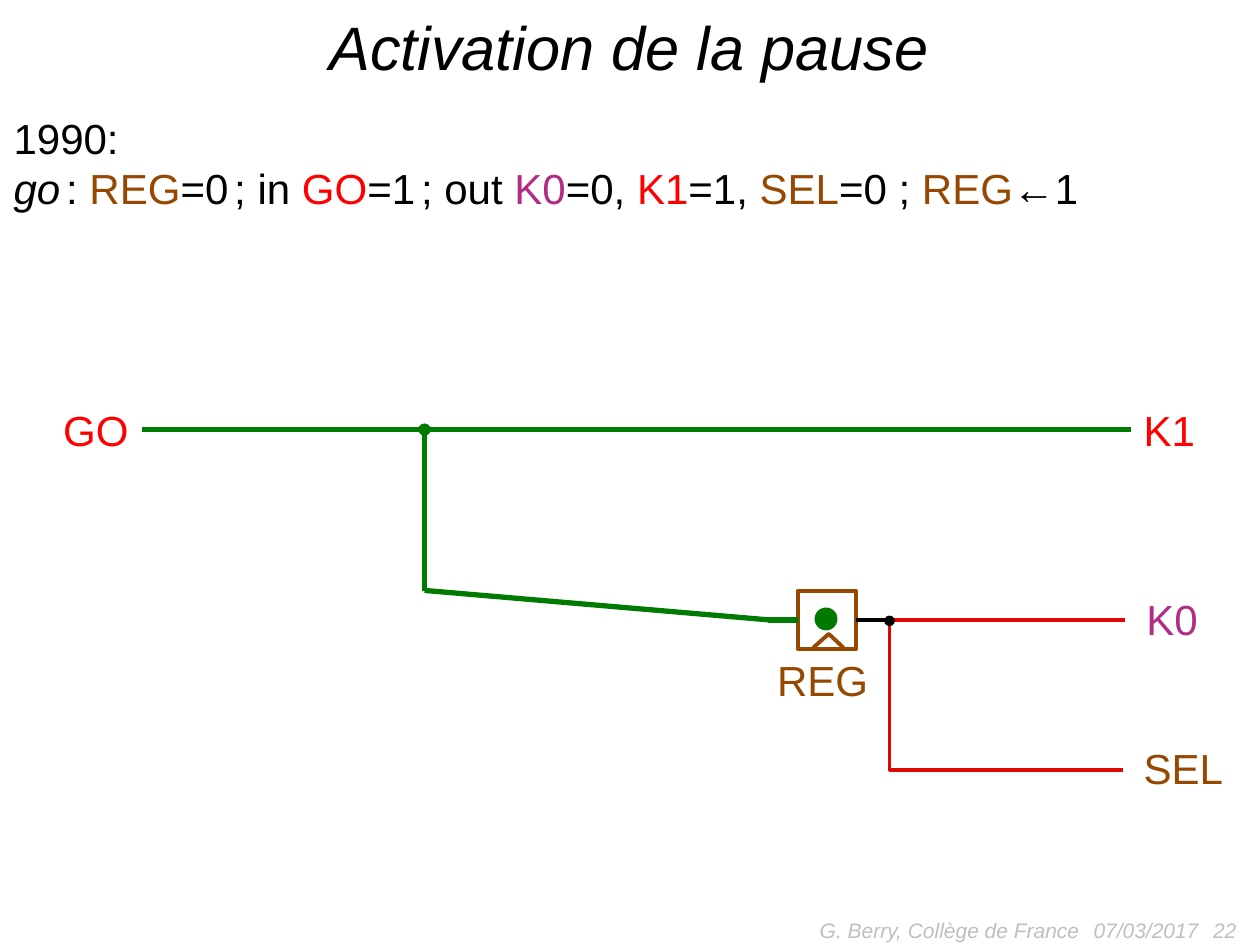
from pptx import Presentation
from pptx import util as u
from pptx.dml.color import RGBColor
from pptx.enum import shapes, text
from pptx.oxml.ns import qn
from lxml import etree

BLACK = RGBColor(0x00, 0x00, 0x00)
GREY = RGBColor(0xBF, 0xBF, 0xBF)
GREEN = RGBColor(0x00, 0x7A, 0x00)
WIRE_RED = RGBColor(0xDD, 0x08, 0x06)
RED = RGBColor(0xFF, 0x00, 0x00)
BROWN = RGBColor(0x96, 0x47, 0x00)
PURPLE = RGBColor(0xB2, 0x2C, 0x85)

GO_Y, REGISTER_Y, SEL_Y = 245.5, 354.3, 440
FORK_X, OUTPUT_X = 242.6, 508.3
REGISTER_LEFT, REGISTER_SIDE = 455.8, 33.2
LABEL_HEIGHT = 36

STATEMENT = [
    ("go", BLACK, 24), (" ", BLACK, 12), (": ", BLACK, 24), ("REG", BROWN, 24),
    ("=0", BLACK, 24), (" ", BLACK, 12), ("; in ", BLACK, 24), ("GO", RED, 24),
    ("=1", BLACK, 24), (" ", BLACK, 12), ("; out ", BLACK, 24), ("K0", PURPLE, 24),
    ("=0, ", BLACK, 24), ("K1", RED, 24), ("=1, ", BLACK, 24), ("SEL", BROWN, 24),
    ("=0 ; ", BLACK, 24), ("REG", BROWN, 24), ("←1", BLACK, 24),
]


def format_run(run, color, size=24, italic=False):
    run.font.name = "Arial"
    run.font.size = u.Pt(size)
    run.font.italic = italic
    run.font.color.rgb = color


def add_title(slide, wording):
    title = slide.shapes.title
    title.left, title.top = u.Pt(8.6), u.Pt(1.4)
    title.width, title.height = u.Pt(702), u.Pt(49.7)
    frame = title.text_frame
    frame.text = wording
    frame.vertical_anchor = text.MSO_ANCHOR.BOTTOM
    frame.paragraphs[0].alignment = text.PP_ALIGN.CENTER
    format_run(frame.paragraphs[0].runs[0], BLACK, 35, True)


def add_text(slide, wording, left, top, width, height, color):
    box = slide.shapes.add_textbox(u.Pt(left), u.Pt(top), u.Pt(width), u.Pt(height))
    frame = box.text_frame
    frame.word_wrap = False
    frame.text = wording
    format_run(frame.paragraphs[0].runs[0], color)
    return frame


def add_statement(slide):
    frame = add_text(slide, "1990:", 0.7, 60.5, 628.6, 65.5, BLACK)
    paragraph = frame.add_paragraph()
    for wording, color, size in STATEMENT:
        run = paragraph.add_run()
        run.text = wording
        format_run(run, color, size, wording == "go")


def add_footer(slide, wording, left, width, alignment):
    frame = add_text(slide, wording, left, 517, width, 28.8, GREY)
    frame.word_wrap = True
    frame.vertical_anchor = text.MSO_ANCHOR.MIDDLE
    frame.paragraphs[0].alignment = alignment
    format_run(frame.paragraphs[0].runs[0], GREY, 12, True)


def add_wire(slide, start, end, color, weight):
    wire = slide.shapes.add_connector(
        shapes.MSO_CONNECTOR.STRAIGHT, *(u.Pt(value) for value in start + end))
    wire.line.color.rgb = color
    wire.line.width = u.Pt(weight)
    etree.SubElement(wire._element.spPr, qn("a:effectLst"))
    return wire


def add_dot(slide, x, y, diameter, color, outline=0):
    corner = u.Pt(x - diameter / 2), u.Pt(y - diameter / 2)
    dot = slide.shapes.add_shape(
        shapes.MSO_SHAPE.OVAL, *corner, u.Pt(diameter), u.Pt(diameter))
    dot.shadow.inherit = False
    dot.fill.solid()
    dot.fill.fore_color.rgb = color
    if outline:
        dot.line.color.rgb = color
        dot.line.width = u.Pt(outline)
    else:
        dot.line.fill.background()


def outline_brown(shape):
    shape.shadow.inherit = False
    shape.fill.background()
    shape.line.color.rgb = BROWN
    shape.line.width = u.Pt(2.25)


def add_register(slide):
    register = slide.shapes.add_shape(
        shapes.MSO_SHAPE.RECTANGLE, u.Pt(REGISTER_LEFT),
        u.Pt(REGISTER_Y - REGISTER_SIDE / 2), u.Pt(REGISTER_SIDE), u.Pt(REGISTER_SIDE))
    outline_brown(register)
    builder = slide.shapes.build_freeform(u.Pt(464.7), u.Pt(370.1))
    builder.add_line_segments(
        [(u.Pt(473.6), u.Pt(362.2)), (u.Pt(482), u.Pt(370.1))], close=False)
    outline_brown(builder.convert_to_shape())
    return register


def add_circuit(slide):
    add_wire(slide, (OUTPUT_X, REGISTER_Y), (643, REGISTER_Y), WIRE_RED, 2.25)
    add_wire(slide, (OUTPUT_X, SEL_Y), (641.5, SEL_Y), WIRE_RED, 2.25)
    add_wire(slide, (OUTPUT_X, REGISTER_Y), (OUTPUT_X, SEL_Y + 0.8), WIRE_RED, 2.25)
    register = add_register(slide)
    entry = add_wire(slide, (438.8, REGISTER_Y), (REGISTER_LEFT, REGISTER_Y), GREEN, 3)
    entry.end_connect(register, 1)
    add_wire(slide, (FORK_X, 337.4), (440, REGISTER_Y), GREEN, 3)
    add_wire(slide, (FORK_X, GO_Y), (FORK_X, 337.9), GREEN, 3)
    output = add_wire(
        slide, (REGISTER_LEFT + REGISTER_SIDE, REGISTER_Y), (OUTPUT_X, REGISTER_Y),
        BLACK, 2.25)
    output.begin_connect(register, 3)
    add_dot(slide, OUTPUT_X, 354.8, 6, BLACK)
    add_wire(slide, (81.2, GO_Y), (646.4, GO_Y), GREEN, 3)
    add_dot(slide, FORK_X, GO_Y, 6, GREEN, 1)
    add_dot(slide, 472, 353.7, 11.6, GREEN, 1.5)


def main():
    presentation = Presentation()
    presentation.slide_width, presentation.slide_height = u.Pt(720), u.Pt(540)
    slide = presentation.slides.add_slide(presentation.slide_layouts[5])
    add_title(slide, "Activation de la pause")
    add_statement(slide)
    add_circuit(slide)
    for wording, left, top, width, color in [
        ("GO", 29, 227.8, 51.8, RED),
        ("K1", 646.4, 227.8, 44, RED),
        ("K0", 648, 335.8, 44, PURPLE),
        ("SEL", 646.4, 421, 60.5, BROWN),
    ]:
        add_text(slide, wording, left, top, width, LABEL_HEIGHT, color)
    register_label = add_text(slide, "REG", 437, 369, 67, LABEL_HEIGHT, BROWN)
    register_label.paragraphs[0].line_spacing = 1.05
    add_footer(slide, "G. Berry, Collège de France", 396, 228, text.PP_ALIGN.RIGHT)
    add_footer(slide, "07/03/2017", 617.8, 167.8, text.PP_ALIGN.LEFT)
    add_footer(slide, "22", 545.8, 167.8, text.PP_ALIGN.RIGHT)
    presentation.save("out.pptx")


if __name__ == "__main__":
    main()
